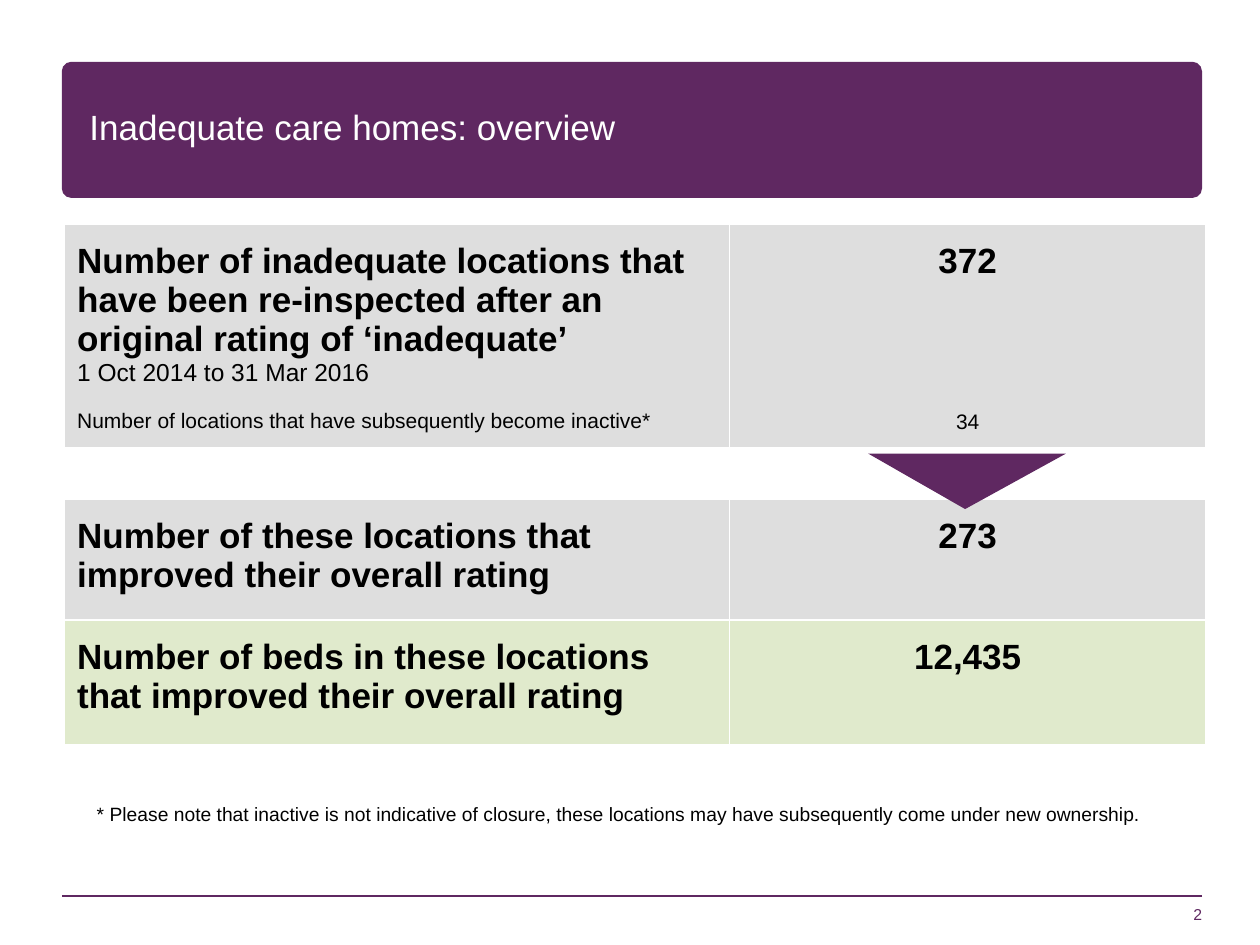
from lxml import etree
from pptx import Presentation
from pptx.dml.color import RGBColor
from pptx.enum import shapes, text
from pptx.oxml import ns
from pptx.util import Pt

PURPLE = RGBColor(0x5F, 0x28, 0x61)
WHITE = RGBColor(0xFF, 0xFF, 0xFF)
BLACK = RGBColor(0, 0, 0)
GREY = RGBColor(0xBF, 0xBF, 0xBF)
GREEN = RGBColor(0xC3, 0xD6, 0x9B)
FONT = "Arial"
LEFT, RIGHT = 35.3, 686.9

COLUMNS = (380, 272.2)
# Height, fill, then the lines (words, size, bold, space before) of each cell
ROWS = (
    (123, GREY,
     [("Number of inadequate locations that have been re-inspected after an "
       "original rating of ‘inadequate’", 20, True, 0),
      ("1 Oct 2014 to 31 Mar 2016", 14, False, 0),
      ("Number of locations that have subsequently become inactive*", 12, False, 13)],
     [("372", 20, True, 0), ("34", 12, False, 74)]),
    (28.8, WHITE, [], []),
    (69, GREY,
     [("Number of these locations that improved their overall rating", 20, True, 0)],
     [("273", 20, True, 0)]),
    (71.5, GREEN,
     [("Number of beds in these locations that improved their overall rating", 20, True, 0)],
     [("12,435", 20, True, 0)]),
)


def set_font(para, size, color, bold=False):
    para.font.name = FONT
    para.font.size = Pt(size)
    para.font.bold = bold
    para.font.color.rgb = color


def add_plain_shape(page, kind, left, top, width, height):
    shape = page.shapes.add_shape(kind, Pt(left), Pt(top), Pt(width), Pt(height))
    shape.shadow.inherit = False
    shape.fill.solid()
    shape.fill.fore_color.rgb = PURPLE
    shape.line.fill.background()
    return shape


def add_label(page, words, size, color, align, left, top, width, height):
    box = page.shapes.add_textbox(Pt(left), Pt(top), Pt(width), Pt(height))
    box.text_frame.word_wrap = True
    para = box.text_frame.paragraphs[0]
    para.text = words
    para.alignment = align
    set_font(para, size, color)
    return box.text_frame


def clear_margins(frame):
    frame.margin_left = frame.margin_right = frame.margin_top = frame.margin_bottom = 0


def add_banner(page, left, top, width, height):
    band = add_plain_shape(page, shapes.MSO_SHAPE.ROUNDED_RECTANGLE, left, top, width, height)
    band.adjustments[0] = 0.07
    title = page.shapes.title
    title.left, title.top = Pt(left + 15.8), Pt(top + 2.9)
    title.width, title.height = Pt(439), Pt(height - 6.2)
    band._element.addnext(title._element)
    frame = title.text_frame
    clear_margins(frame)
    frame.auto_size = text.MSO_AUTO_SIZE.NONE
    frame.vertical_anchor = text.MSO_ANCHOR.MIDDLE
    para = frame.paragraphs[0]
    para.text = "Inadequate care homes: overview"
    para.alignment = text.PP_ALIGN.LEFT
    para.line_spacing = 0.85
    set_font(para, 20, WHITE)


def style_cell(cell, color, bottom_width):
    """Draw white borders and a half-transparent fill."""
    props = cell._tc.get_or_add_tcPr()
    for side, width in (("L", 1), ("R", 1), ("T", 1), ("B", bottom_width)):
        line = etree.SubElement(props, ns.qn(f"a:ln{side}"), w=str(Pt(width)))
        solid = etree.SubElement(line, ns.qn("a:solidFill"))
        etree.SubElement(solid, ns.qn("a:srgbClr"), val=str(WHITE))
    cell.fill.solid()
    cell.fill.fore_color.rgb = color
    tint = props.find(ns.qn("a:solidFill")).find(ns.qn("a:srgbClr"))
    etree.SubElement(tint, ns.qn("a:alpha"), val="50000")


def fill_cell(cell, lines, align):
    cell.margin_top = Pt(10 if lines else 3.6)
    cell.margin_bottom = Pt(2)
    frame = cell.text_frame
    for index, (words, size, bold, gap) in enumerate(lines):
        para = frame.add_paragraph() if index else frame.paragraphs[0]
        para.text = words
        para.alignment = align
        if gap:
            para.space_before = Pt(gap)
        set_font(para, size, BLACK, bold)


def add_ratings_table(page, left, top):
    height = sum(row[0] for row in ROWS)
    table = page.shapes.add_table(len(ROWS), len(COLUMNS), Pt(left), Pt(top),
                                  Pt(sum(COLUMNS)), Pt(height)).table
    table.first_row = table.horz_banding = False
    for column, width in zip(table.columns, COLUMNS):
        column.width = Pt(width)
    aligns = (text.PP_ALIGN.LEFT, text.PP_ALIGN.CENTER)
    for index, (height, color, *contents) in enumerate(ROWS):
        table.rows[index].height = Pt(height)
        for cell, lines, align in zip(table.rows[index].cells, contents, aligns):
            style_cell(cell, color, 1 if index else 3)
            fill_cell(cell, lines, align)


def add_down_arrow(page, left, top, width, height):
    arrow = add_plain_shape(page, shapes.MSO_SHAPE.ISOSCELES_TRIANGLE, left, top, width, height)
    arrow.adjustments[0] = 0.51
    arrow.rotation = 180


def add_footer(page, left, top, right):
    rule = page.shapes.add_connector(shapes.MSO_CONNECTOR.STRAIGHT,
                                     Pt(right), Pt(top), Pt(left), Pt(top))
    rule.line.color.rgb = PURPLE
    rule.line.width = Pt(1)
    etree.SubElement(rule._element.spPr, ns.qn("a:effectLst"))
    frame = add_label(page, "2", 9, PURPLE, text.PP_ALIGN.RIGHT,
                      right - 149.8, top - 20.2, 149.8, 36)
    clear_margins(frame)
    frame.vertical_anchor = text.MSO_ANCHOR.BOTTOM


def main():
    deck = Presentation()
    deck.slide_width, deck.slide_height = Pt(720), Pt(540)
    page = deck.slides.add_slide(deck.slide_layouts.get_by_name("Title Only"))
    add_banner(page, LEFT, 35.3, RIGHT - LEFT, 77.8)
    add_footer(page, LEFT, 511.9, RIGHT)
    add_ratings_table(page, 36.9, 128.3)
    add_label(page, "* Please note that inactive is not indicative of closure, these "
              "locations may have subsequently come under new ownership.",
              11, BLACK, text.PP_ALIGN.JUSTIFY, 48.2, 455, 629.3, 20.9)
    add_down_arrow(page, 496.1, 259.2, 113, 31.7)
    deck.save("out.pptx")


if __name__ == "__main__":
    main()
